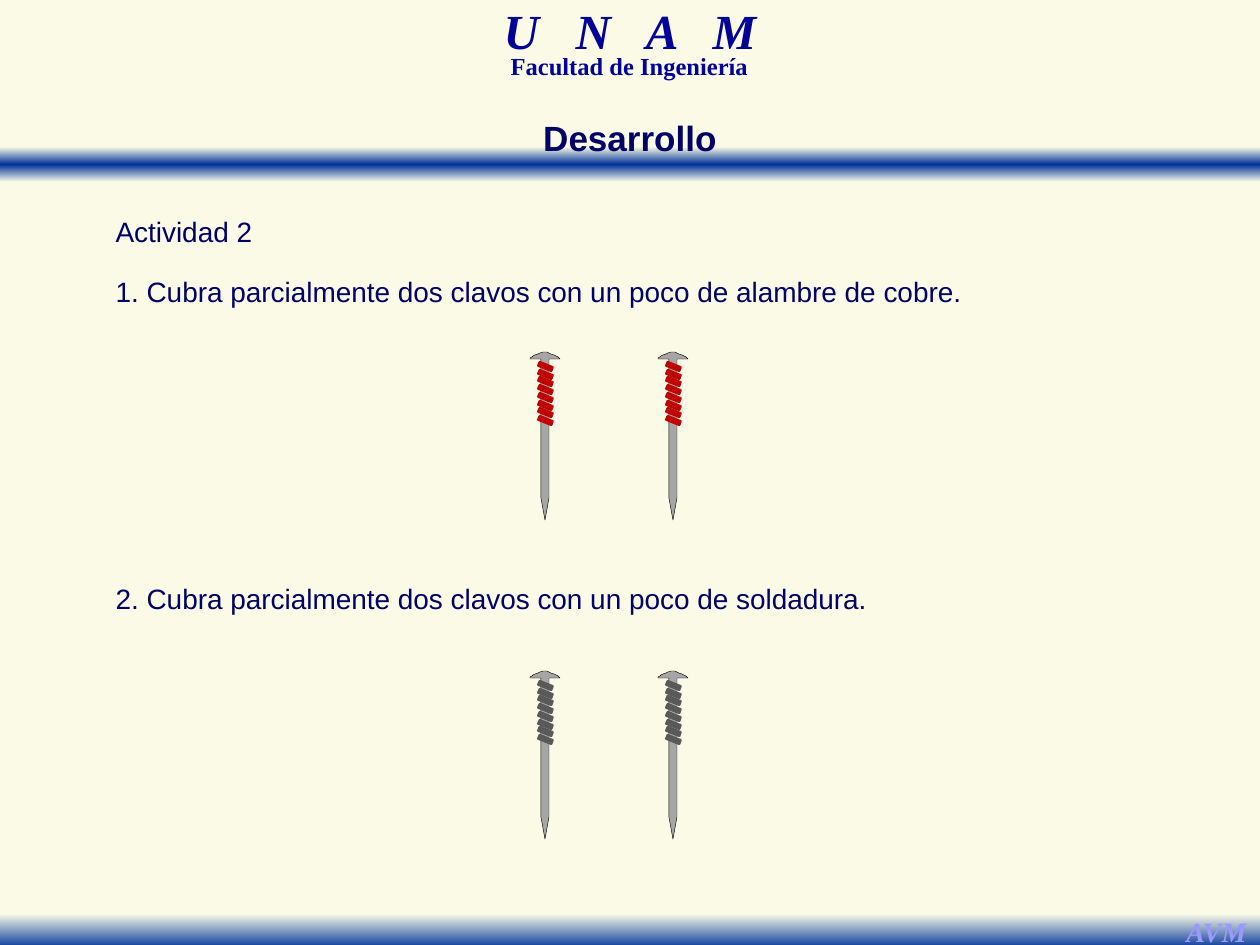
from dataclasses import dataclass

from lxml import etree
from pptx import Presentation
from pptx import util as u
from pptx.dml.color import RGBColor
from pptx.enum import shapes, text
from pptx.oxml.ns import qn


@dataclass(frozen=True)
class Theme:
    paper: str = "FAFAE6"
    band: str = "003399"
    header: str = "000099"
    ink: str = "000066"
    author: str = "9999FF"
    steel: str = "A6A6A6"
    outline: str = "000000"
    copper: str = "C00000"
    solder: str = "595959"
    sans: str = "Arial"
    serif: str = "Times New Roman"
    school_size: int = 28
    faculty_size: int = 14
    author_size: int = 16
    title_size: int = 20
    body_size: int = 16


T = Theme()
PX = u.Inches(1) / 126
COILS = 8
COIL_SPAN = 54


def px(n):
    return u.Emu(round(n * PX))


def rgb(color):
    return RGBColor.from_string(color)


def place(sp, x, y, w, h):
    sp.left, sp.top, sp.width, sp.height = px(x), px(y), px(w), px(h)


def setup_frame(sp, wrap):
    tf = sp.text_frame
    tf.word_wrap = wrap
    tf.auto_size = text.MSO_AUTO_SIZE.NONE
    tf.vertical_anchor = text.MSO_ANCHOR.TOP
    tf.margin_left = tf.margin_right = u.Inches(0.1)
    tf.margin_top = tf.margin_bottom = u.Inches(0.05)
    return tf


def add_run(p, words, font, size, color, bold=False, italic=False):
    r = p.add_run()
    r.text = words
    r.font.name, r.font.size = font, u.Pt(size)
    r.font.bold, r.font.italic = bold, italic
    r.font.color.rgb = rgb(color)
    return r


def add_label(s, box, spacing=1.0, wrap=True):
    sp = s.shapes.add_textbox(*map(px, box))
    p = setup_frame(sp, wrap).paragraphs[0]
    p.alignment = text.PP_ALIGN.CENTER
    p.line_spacing = spacing
    return p


def add_band(s, y, colors):
    sp = s.shapes.add_shape(shapes.MSO_SHAPE.RECTANGLE, 0, px(y), px(1260), px(35))
    sp.shadow.inherit = False
    sp.line.fill.background()
    sp.fill.gradient()
    sp.fill.gradient_angle = 270
    stops = sp.element.find(".//" + qn("a:gsLst"))
    stops.clear()
    for i, color in enumerate(colors):
        gs = etree.SubElement(stops, qn("a:gs"), pos=str(100000 * i // (len(colors) - 1)))
        etree.SubElement(gs, qn("a:srgbClr"), val=color)


def fill_title(sp, words):
    sp.element.getparent().append(sp.element)
    place(sp, 530, 93, 200, 65)
    p = setup_frame(sp, False).paragraphs[0]
    p.alignment = text.PP_ALIGN.CENTER
    p.line_spacing = 1.4
    add_run(p, words, T.sans, T.title_size, T.ink, bold=True)


def fill_body(sp, y, h, lines):
    place(sp, 103, y, 1052, h)
    tf = setup_frame(sp, True)
    for i, (words, indent) in enumerate(lines):
        p = tf.add_paragraph() if i else tf.paragraphs[0]
        p.alignment = text.PP_ALIGN.JUSTIFY
        p.line_spacing, p.space_before, p.space_after = 1.4, u.Pt(0), u.Pt(7.4)
        pPr = p._p.get_or_add_pPr()
        pPr.set("marL", str(px(indent)))
        pPr.set("indent", str(px(-indent)))
        etree.SubElement(pPr, qn("a:buNone"))
        add_run(p, words, T.sans, T.body_size, T.ink)


def bezier(*points, steps=8):
    curve = []
    for i in range(1, steps + 1):
        t = i / steps
        weights = ((1 - t) ** 3, 3 * t * (1 - t) ** 2, 3 * t * t * (1 - t), t ** 3)
        curve.append(tuple(sum(w * pt[k] for w, pt in zip(weights, points)) for k in (0, 1)))
    return curve


def paint(sp, fill, line, width):
    sp.shadow.inherit = False
    sp.fill.solid()
    sp.fill.fore_color.rgb = rgb(fill)
    sp.line.color.rgb = rgb(line)
    sp.line.width = u.Pt(width)


def add_nail(s, x, y, coil_color):
    group = s.shapes.add_group_shape()
    head = bezier((0, 7), (0, 5), (9, 0), (15, 0)) + bezier((15, 0), (19, 0), (29, 6), (30, 7))
    outline = [(0, 7), *head, (19, 7), (19, 146), (15, 168), (11, 146), (11, 7)]
    points = [(x + dx, y + dy) for dx, dy in outline]
    fb = group.shapes.build_freeform(*points[0], scale=PX)
    fb.add_line_segments(points[1:], close=True)
    paint(fb.convert_to_shape(), T.steel, T.outline, 0.25)
    for i in range(COILS):
        top = y + 12 + round(COIL_SPAN * i / (COILS - 1))
        sp = group.shapes.add_shape(
            shapes.MSO_SHAPE.ROUNDED_RECTANGLE, px(x + 8), px(top), px(15), px(5))
        sp.rotation = 21.8
        paint(sp, coil_color, coil_color, 0.75)


def add_header(s):
    p = add_label(s, (383, 10, 494, 54), 0.7)
    style = (T.serif, T.school_size, T.header, True, True)
    r = add_run(p, "U N A ", *style)
    r.font._element.set("spc", "700")
    add_run(p, "M", *style)
    p = add_label(s, (404, 53, 451, 33), 0.7)
    add_run(p, "Facultad de Ingeniería", T.serif, T.faculty_size, T.header, bold=True)


def main():
    prs = Presentation()
    prs.slide_width, prs.slide_height = px(1260), px(945)
    s = prs.slides.add_slide(prs.slide_layouts[3])
    s.background.fill.solid()
    s.background.fill.fore_color.rgb = rgb(T.paper)
    title, first, second = s.placeholders

    add_band(s, 147, (T.paper, T.band, T.paper))
    add_header(s)
    add_band(s, 914, (T.paper, T.band))
    p = add_label(s, (1173, 908, 87, 47), wrap=False)
    add_run(p, "AVM", T.serif, T.author_size, T.author, bold=True, italic=True)

    fill_title(title, "Desarrollo")
    fill_body(first, 195, 121, [
        ("Actividad 2", 0),
        ("1. Cubra parcialmente dos clavos con un poco de alambre de cobre.", 37),
    ])
    fill_body(second, 562, 54, [
        ("2. Cubra parcialmente dos clavos con un poco de soldadura.", 37),
    ])
    for y, color in ((352, T.copper), (671, T.solder)):
        for x in (530, 658):
            add_nail(s, x, y, color)
    prs.save("out.pptx")


if __name__ == "__main__":
    main()
